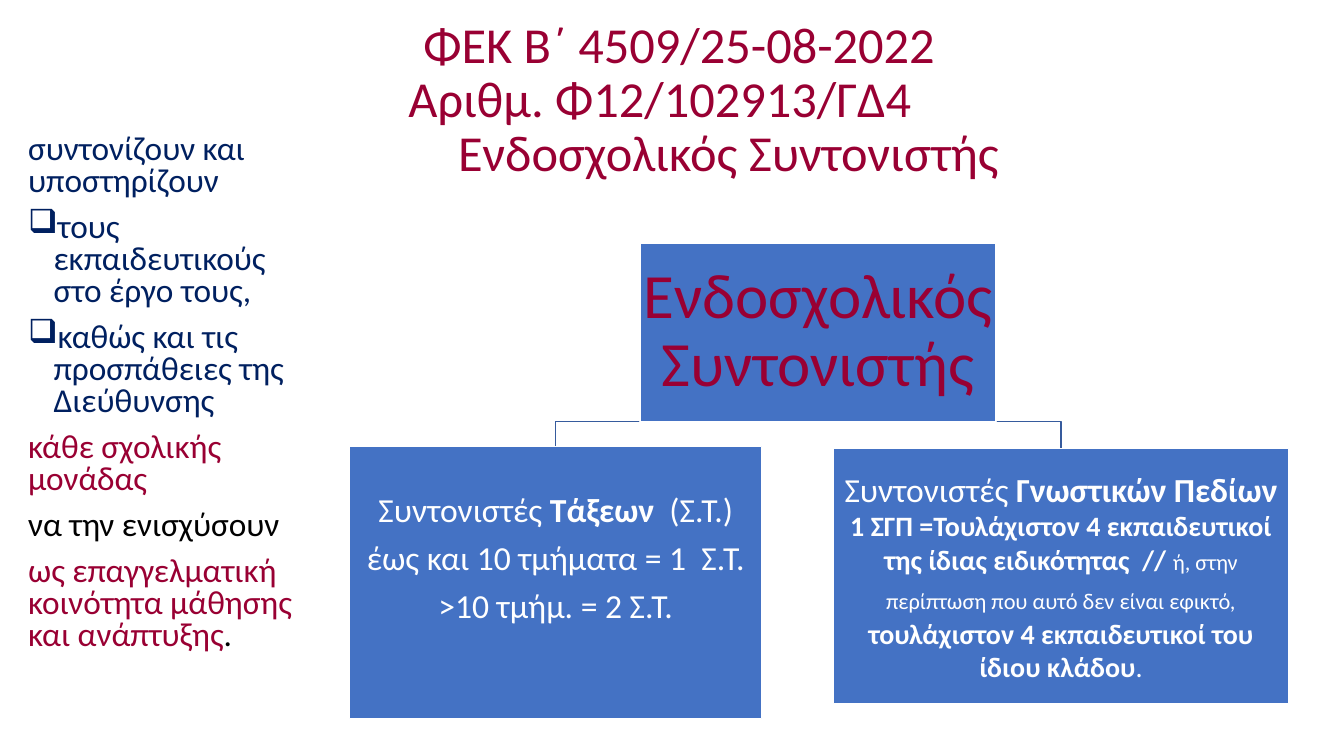
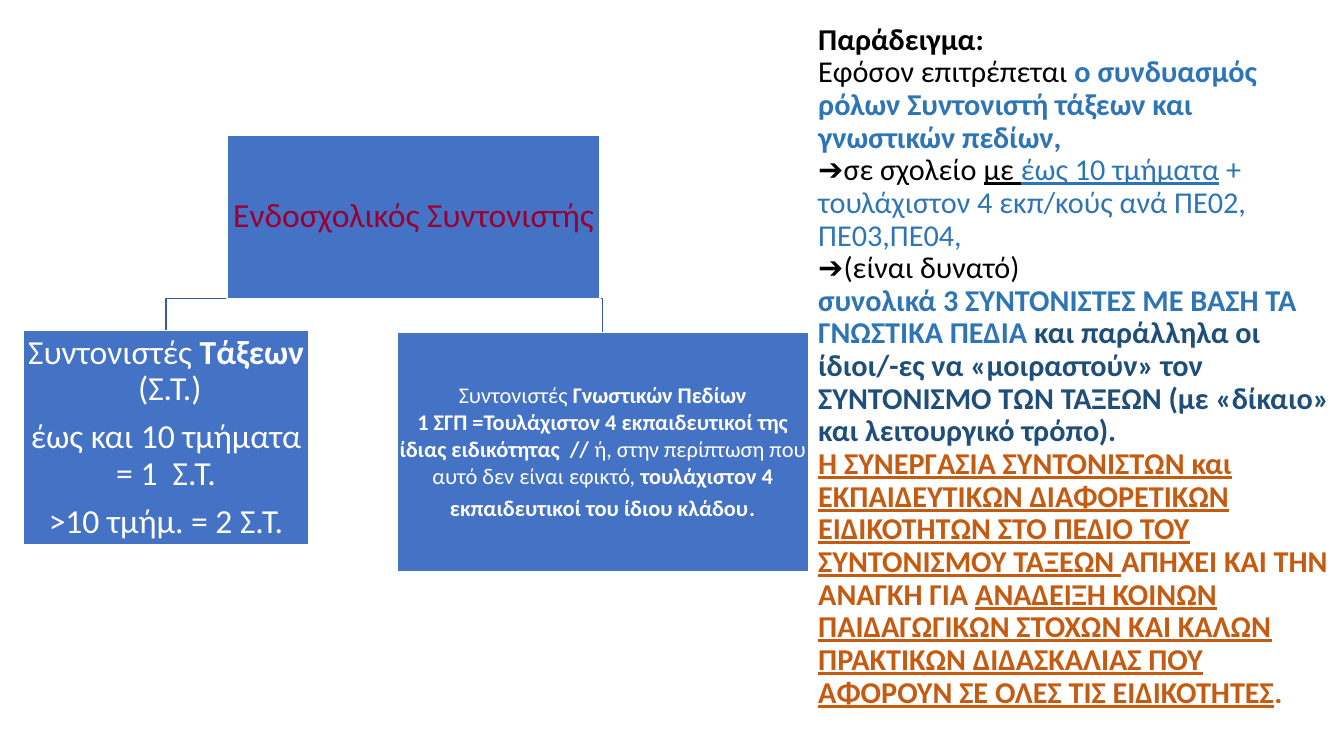
from lxml import etree
from pptx import Presentation
from pptx import util as u
from pptx.dml.color import RGBColor
from pptx.enum import shapes, text
from pptx.oxml.ns import qn


class Theme:
    font = "Calibri"
    wine, navy, black, white = "990033", "002060", "000000", "FFFFFF"
    blue, deep_blue, orange = "2E75B6", "1F4E79", "C55A11"
    box, branch = "4472C4", "365B9D"
    heading, body, example = 36, 23.8, 21.6
    root, large, medium, small = 45, 24, 20, 16


def write(frame, paragraphs, base, layout, insets=(0.25, 0.13, 0.25, 0.13)):
    """Fill frame with (paragraph format, runs); each run is (text, font format).

    Paragraph and font formats override layout and base; insets are in cm,
    in the order left, top, right, bottom.
    """
    frame.word_wrap = True
    frame.auto_size = text.MSO_AUTO_SIZE.NONE
    for side, inset in zip(("left", "top", "right", "bottom"), insets):
        setattr(frame, f"margin_{side}", u.Cm(inset))
    for index, (changes, runs) in enumerate(paragraphs):
        paragraph = frame.paragraphs[0] if index == 0 else frame.add_paragraph()
        fmt = {**layout, **changes}
        properties = paragraph._p.get_or_add_pPr()
        properties.set("marL", str(u.Cm(fmt.pop("left", 0))))
        properties.set("indent", str(u.Cm(fmt.pop("hang", 0))))
        bullet = fmt.pop("bullet", None)
        for name, value in fmt.items():
            setattr(paragraph, name, value)
        if bullet:
            etree.SubElement(properties, qn("a:buChar")).set("char", bullet)
        for words, style in runs:
            run = paragraph.add_run()
            run.text = words
            look = {"name": Theme.font, **base, **style}
            run.font.color.rgb = RGBColor.from_string(look.pop("color"))
            run.font.size = u.Pt(look.pop("size"))
            for name, value in look.items():
                setattr(run.font, name, value)


def place(part, left, top, width, height):
    part.left, part.top, part.width, part.height = map(u.Cm, (left, top, width, height))


BOLD, PLAIN = {"bold": True}, {"bold": False}
LINED = {"underline": True}
CENTRE = {"alignment": text.PP_ALIGN.CENTER}
LEFT = {"alignment": text.PP_ALIGN.LEFT}
TIGHT = {**CENTRE, "line_spacing": 0.9, "space_after": u.Pt(8.4)}
BULLET = {"left": 0.64, "hang": -0.64, "bullet": "❑"}

coordinator = [({}, [("Ενδοσχολικός Συντονιστής", {})])]
class_coordinators = [
    ({}, [("Συντονιστές ", {}), ("Τάξεων", BOLD), ("  (Σ.Τ.)", {})]),
    ({}, [("έως και 10 τμήματα = 1  Σ.Τ.", {})]),
    ({}, [(">10 τμήμ. = 2 Σ.Τ.", {})]),
]
field_rule = "1 ΣΓΠ =Τουλάχιστον 4 εκπαιδευτικοί της ίδιας ειδικότητας  // "
field_exception = "ή, στην περίπτωση που αυτό δεν είναι εφικτό,"
field_fallback = "τουλάχιστον 4 εκπαιδευτικοί του ίδιου κλάδου"
field_name = ({}, [("Συντονιστές ", {}), ("Γνωστικών Πεδίων", BOLD)])
medium_bold = {"size": Theme.medium, **BOLD}
fields_mixed = [field_name, ({}, [
    (field_rule, medium_bold), (field_exception, {"size": Theme.small}), (" ", {}),
    (field_fallback, medium_bold), (".", {"size": Theme.medium}),
])]
fields_small = [field_name, ({}, [
    (field_rule, BOLD), (field_exception + " ", {}),
    (field_fallback, BOLD), (".", {"size": Theme.medium}),
])]

regulation = [
    ({"left": 1.27}, [("ΦΕΚ Β΄ 4509/25-08-2022", {})]),
    ({"left": 0.3}, [("Αριθμ. Φ12/102913/ΓΔ4", {})]),
    ({"left": 3.75}, [("Ενδοσχολικός Συντονιστής", {})]),
]
black, wine = {"color": Theme.black}, {"color": Theme.wine}
duties = [
    ({}, [("συντονίζουν και υποστηρίζουν", {})]),
    (BULLET, [("τους εκπαιδευτικούς στο έργο τους,", {})]),
    (BULLET, [("καθώς και τις προσπάθειες της Διεύθυνσης", {})]),
    ({}, [("κάθε σχολικής μονάδας", wine)]),
    ({}, [("να την ενισχύσουν", black)]),
    ({}, [("ως επαγγελματική κοινότητα μάθησης και ανάπτυξης", wine), (".", black)]),
]
blue = {"color": Theme.blue}
orange = {"color": Theme.orange, **BOLD}
example = [
    ({}, [("Παράδειγμα:", BOLD)]),
    ({}, [("Εφόσον επιτρέπεται ", {}),
          ("ο συνδυασμός ρόλων Συντονιστή τάξεων και γνωστικών πεδίων,", {**blue, **BOLD})]),
    ({}, [("➔σε σχολείο ", {}), ("με ", LINED), ("έως 10 τμήματα", {**blue, **LINED}),
          (" + τουλάχιστον 4 εκπ/κούς ανά ΠΕ02, ΠΕ03,ΠΕ04,", blue)]),
    ({}, [("➔(είναι δυνατό)", {})]),
    ({}, [("συνολικά 3 ΣΥΝΤΟΝΙΣΤΕΣ ΜΕ ΒΑΣΗ ΤΑ ΓΝΩΣΤΙΚΑ ΠΕΔΙΑ ", {**blue, **BOLD}),
          ("και παράλληλα οι ίδιοι/-ες να «μοιραστούν» τον ΣΥΝΤΟΝΙΣΜΟ ΤΩΝ ΤΑΞΕΩΝ "
           "(με «δίκαιο» και λειτουργικό τρόπο).", {"color": Theme.deep_blue, **BOLD})]),
    ({}, [("Η ΣΥΝΕΡΓΑΣΙΑ ΣΥΝΤΟΝΙΣΤΩΝ και ΕΚΠΑΙΔΕΥΤΙΚΩΝ ΔΙΑΦΟΡΕΤΙΚΩΝ ΕΙΔΙΚΟΤΗΤΩΝ "
           "ΣΤΟ ΠΕΔΙΟ ΤΟΥ ΣΥΝΤΟΝΙΣΜΟΥ ΤΑΞΕΩΝ ", {**orange, **LINED}),
          ("ΑΠΗΧΕΙ ΚΑΙ ΤΗΝ ΑΝΑΓΚΗ ΓΙΑ ", orange),
          ("ΑΝΑΔΕΙΞΗ ΚΟΙΝΩΝ ΠΑΙΔΑΓΩΓΙΚΩΝ ΣΤΟΧΩΝ ΚΑΙ ΚΑΛΩΝ ΠΡΑΚΤΙΚΩΝ ΔΙΔΑΣΚΑΛΙΑΣ "
           "ΠΟΥ ΑΦΟΡΟΥΝ ΣΕ ΟΛΕΣ ΤΙΣ ΕΙΔΙΚΟΤΗΤΕΣ", {**orange, **LINED}),
          (".", orange)]),
]

# Each chart lists its root first: place, paragraphs, size, colour, layout, bottom inset
pages = [
    {
        "title": (regulation, (1.22, 0.71, 30.53, 3.68), Theme.heading, Theme.wine, CENTRE, 0.13),
        "chart": [
            ((16.13, 6.12, 8.97, 4.5), coordinator, Theme.root, Theme.wine, TIGHT, 0.05),
            ((8.81, 11.25, 10.39, 6.86), class_coordinators, Theme.large, Theme.white, TIGHT, 1.2),
            ((21.01, 11.3, 11.46, 6.43), fields_mixed, Theme.large, Theme.white, CENTRE, 0.05),
        ],
    },
    {
        "title": (example, (20.37, 0.51, 13.51, 18.29), Theme.example, Theme.black, LEFT, 0.95),
        "chart": [
            ((5.72, 3.4, 9.4, 4.13), coordinator, Theme.large, Theme.wine, TIGHT, 0.05),
            ((0.58, 8.33, 7.21, 5.41), class_coordinators, Theme.large, Theme.white, TIGHT, 0.05),
            ((10.01, 8.38, 10.36, 6.02), fields_small, Theme.small, Theme.white, CENTRE, 0.03),
        ],
    },
]

deck = Presentation()
deck.slide_width, deck.slide_height = u.Cm(33.87), u.Cm(19.05)

for page in pages:
    slide = deck.slides.add_slide(deck.slide_layouts[5])
    paragraphs, spot, size, color, layout, bottom = page["title"]
    heading = slide.shapes.title
    place(heading, *spot)
    heading.text_frame.vertical_anchor = text.MSO_ANCHOR.MIDDLE
    write(heading.text_frame, paragraphs, {"size": size, "color": color},
          {**layout, "line_spacing": 0.9}, (0.25, 0.13, 0.25, bottom))

    root_left, root_top, root_width, root_height = page["chart"][0][0]
    fork_x, fork_y = root_left + root_width / 2, root_top + root_height
    for (left, top, width, _), *_ in page["chart"][1:]:
        middle = left + width / 2
        outline = slide.shapes.build_freeform(u.Cm(fork_x), u.Cm(fork_y))
        outline.add_line_segments(
            [(u.Cm(middle), u.Cm(fork_y)), (u.Cm(middle), u.Cm(top))], close=False)
        branch = outline.convert_to_shape()
        branch.shadow.inherit = False
        branch.fill.background()
        branch.line.color.rgb = RGBColor.from_string(Theme.branch)
        branch.line.width = u.Pt(1)

    for spot, paragraphs, size, color, layout, bottom in page["chart"]:
        role = slide.shapes.add_shape(shapes.MSO_SHAPE.RECTANGLE, *map(u.Cm, spot))
        role.shadow.inherit = False
        role.fill.solid()
        role.fill.fore_color.rgb = RGBColor.from_string(Theme.box)
        role.line.color.rgb = RGBColor.from_string(Theme.white)
        role.line.width = u.Pt(1)
        role.text_frame.vertical_anchor = text.MSO_ANCHOR.MIDDLE
        inset = min(bottom, 0.05)
        write(role.text_frame, paragraphs, {"size": size, "color": color, **PLAIN},
              layout, (inset, inset, inset, bottom))

duty_list = deck.slides[0].shapes.add_textbox(*map(u.Cm, (0.46, 3.28, 7.62, 13.49)))
write(duty_list.text_frame, duties, {"size": Theme.body, "color": Theme.navy},
      {**LEFT, "line_spacing": 0.8, "space_before": u.Pt(10)})

deck.save("out.pptx")
